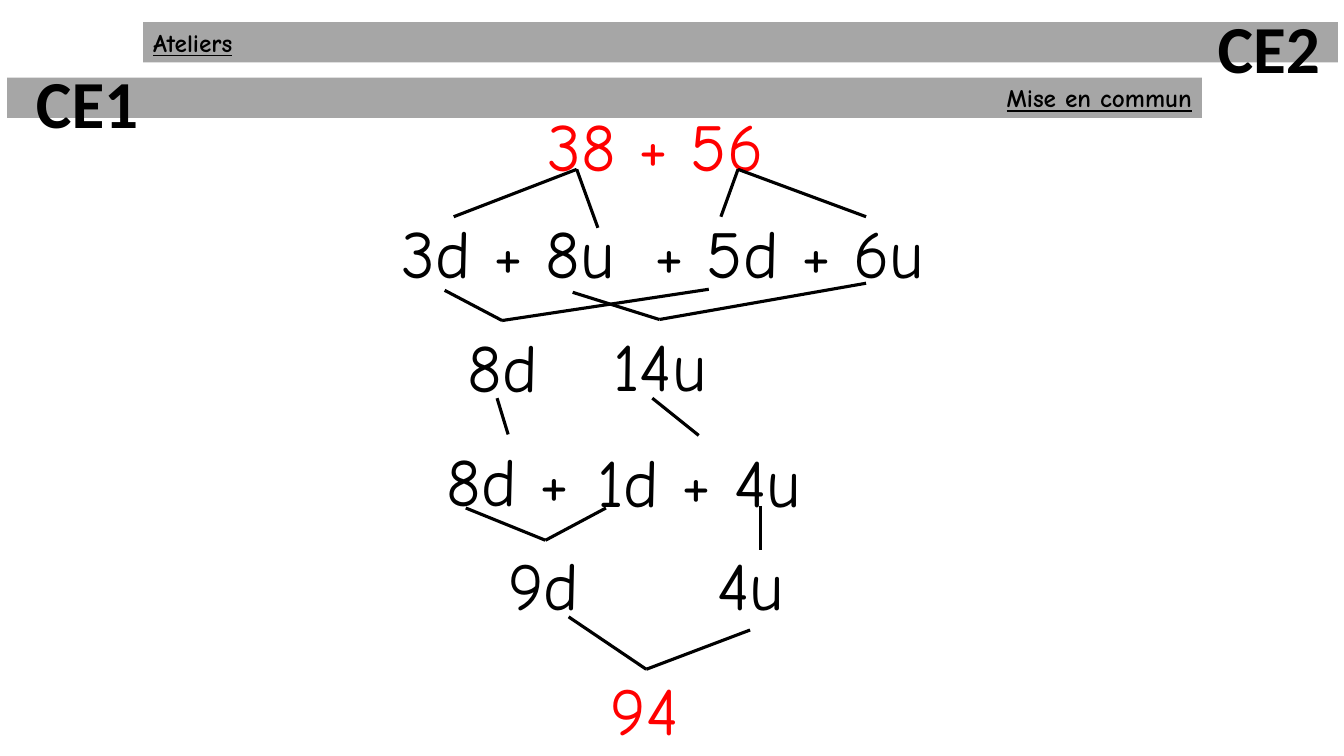
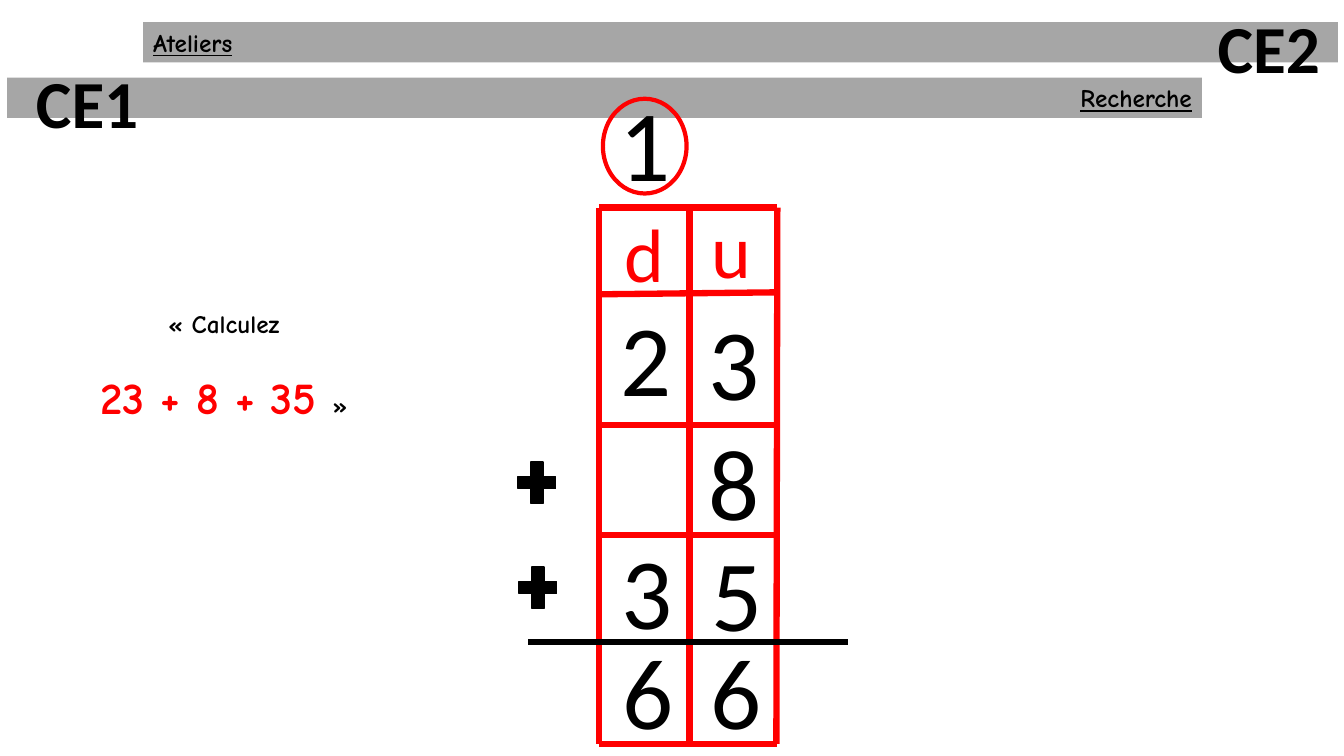
from lxml import etree
from pptx import Presentation
from pptx.dml.color import RGBColor
from pptx.enum.shapes import MSO_CONNECTOR, MSO_SHAPE
from pptx.enum.text import MSO_ANCHOR, PP_ALIGN
from pptx.oxml.ns import qn
from pptx.util import Inches, Pt

BLACK = RGBColor(0x00, 0x00, 0x00)
RED = RGBColor(0xFF, 0x00, 0x00)
GREY = RGBColor(0xA6, 0xA6, 0xA6)

LEFT, CENTER, RIGHT = PP_ALIGN.LEFT, PP_ALIGN.CENTER, PP_ALIGN.RIGHT
TOP, MIDDLE = MSO_ANCHOR.TOP, MSO_ANCHOR.MIDDLE
RECTANGLE, OVAL, PLUS = MSO_SHAPE.RECTANGLE, MSO_SHAPE.OVAL, MSO_SHAPE.MATH_PLUS
STRAIGHT = MSO_CONNECTOR.STRAIGHT

COLUMNS, ROWS = 1333, 750
CELL = Inches(0.01)

HAND, PRINT = "Comic Neue", "Calibri"
LABEL = {"name": HAND, "size": Pt(18), "bold": True, "underline": True}
PROMPT = {"name": HAND, "size": Pt(18), "bold": True}
SUM = {"name": HAND, "size": Pt(32), "bold": True}
LEVEL = {"name": PRINT, "size": Pt(48), "bold": True}
STEP = {"name": HAND, "size": Pt(48)}
HEADING = {"name": PRINT, "size": Pt(54)}
DIGIT = {"name": PRINT, "size": Pt(72)}
LEVEL_SPACING = {"line_spacing": 1.15, "space_after": Pt(10)}


def apply(target, values):
    for key, value in values.items():
        setattr(target, key, value)


class Lesson:
    def __init__(self):
        self.deck = Presentation()
        self.deck.slide_width = COLUMNS * CELL
        self.deck.slide_height = ROWS * CELL
        self.page = None

    def add_page(self, stage):
        self.page = self.deck.slides.add_slide(self.deck.slide_layouts[6])
        self.band(142, 22, "Ateliers", LEFT)
        self.band(7, 77, stage, RIGHT)
        for label, left, top in (("CE2", 1070, -11), ("CE1", -102, 44)):
            box = self.text(label, left, top, 377, 56, LEVEL)
            apply(box.text_frame.paragraphs[0], LEVEL_SPACING)

    def span(self, para, text, style, color=BLACK):
        span = para.add_run()
        span.text = text
        apply(span.font, style)
        span.font.color.rgb = color

    def text(self, text, left, top, width, height, style, color=BLACK, wrap=True):
        box = self.page.shapes.add_textbox(
            left * CELL, top * CELL, width * CELL, height * CELL)
        apply(box.text_frame, {"word_wrap": wrap, "vertical_anchor": TOP})
        para = box.text_frame.paragraphs[0]
        para.alignment = CENTER
        self.span(para, text, style, color)
        return box

    def shape(self, kind, left, top, width, height, fill=None, line=None, weight=1):
        shape = self.page.shapes.add_shape(
            kind, left * CELL, top * CELL, width * CELL, height * CELL)
        shape.shadow.inherit = False
        for part, color in ((shape.fill, fill), (shape.line.fill, line)):
            if color is None:
                part.background()
            else:
                part.solid()
                part.fore_color.rgb = color
        if line is not None:
            shape.line.width = Pt(weight)
        return shape

    def band(self, left, top, text, alignment):
        band = self.shape(RECTANGLE, left, top, 1185, 40, GREY)
        apply(band.text_frame, {"word_wrap": True, "vertical_anchor": MIDDLE})
        para = band.text_frame.paragraphs[0]
        para.alignment = alignment
        self.span(para, text, LABEL)

    def line(self, start, end, color=BLACK, weight=2.25):
        line = self.page.shapes.add_connector(
            STRAIGHT, *(value * CELL for value in (*start, *end)))
        line.line.color.rgb = color
        line.line.width = Pt(weight)
        etree.SubElement(line._element.spPr, qn("a:effectLst"))

    def branches(self, joint, *ends):
        for end in ends:
            self.line(joint, end)


def add_decomposition(lesson):
    lesson.add_page("Mise en commun")
    steps = (
        ("38 + 56", 470, 99, 360, RED),
        ("3d + 8u", 324, 205, 360, BLACK),
        ("+ 5d + 6u", 603, 205, 360, BLACK),
        ("14u", 577, 317, 155, BLACK),
        ("8d", 421, 318, 155, BLACK),
        ("1d + 4u", 555, 432, 277, BLACK),
        ("8d +", 421, 431, 166, BLACK),
        ("4u", 667, 534, 155, BLACK),
        ("9d", 462, 534, 155, BLACK),
        ("94", 562, 658, 155, RED),
    )
    for text, left, top, width, color in steps:
        lesson.text(text, left, top, width, 91, STEP, color)
    lesson.branches((572, 168), (450, 215), (593, 226))
    lesson.branches((732, 168), (715, 215), (859, 215))
    lesson.branches((498, 318), (441, 288), (703, 287))
    lesson.branches((654, 317), (568, 290), (859, 281))
    lesson.branches((647, 395), (693, 432))
    lesson.branches((493, 395), (504, 431))
    lesson.branches((754, 502), (754, 546))
    lesson.branches((541, 536), (462, 504), (601, 504))
    lesson.branches((641, 664), (564, 612), (744, 625))


def add_column_sum(lesson):
    lesson.add_page("Recherche")
    prompt = lesson.text("« Calculez", 36, 301, 372, 125, PROMPT)
    para = prompt.text_frame.add_paragraph()
    apply(para, {"alignment": CENTER, "space_before": Pt(22)})
    lesson.span(para, "23 + 8 + 35 ", SUM, RED)
    lesson.span(para, "»", PROMPT)

    left, right, foot, top, bottom = 594, 771, 770, 206, 738
    for start, end in ((left, left), (684, 684), (right, foot)):
        lesson.line((start, top), (end, bottom), RED, 4.5)
    for start, end in ((top, top), (292, 290), (422, 422), (531, 531), (bottom, bottom)):
        lesson.line((left, start), (right, end), RED, 4.5)
    lesson.line((524, 637), (841, 637), BLACK, 4.5)

    lesson.text("u", 695, 196, 60, 101, HEADING, RED, wrap=False)
    lesson.text("d", 601, 200, 77, 101, HEADING, RED)
    digits = (
        ("3", 693, 292), ("2", 605, 288),
        ("8", 693, 411),
        ("5", 696, 522), ("3", 606, 520),
        ("6", 695, 619),
        ("1", 604, 75),
        ("6", 607, 619),
    )
    for text, column, row in digits:
        lesson.text(text, column, row, 71, 131, DIGIT, wrap=False)
    for column, row in ((507, 451), (508, 555)):
        lesson.shape(PLUS, column, row, 51, 56, BLACK, BLACK)
    lesson.shape(OVAL, 598, 98, 83, 94, line=RED, weight=3)


def main():
    lesson = Lesson()
    add_decomposition(lesson)
    add_column_sum(lesson)
    lesson.deck.save("out.pptx")


if __name__ == "__main__":
    main()
